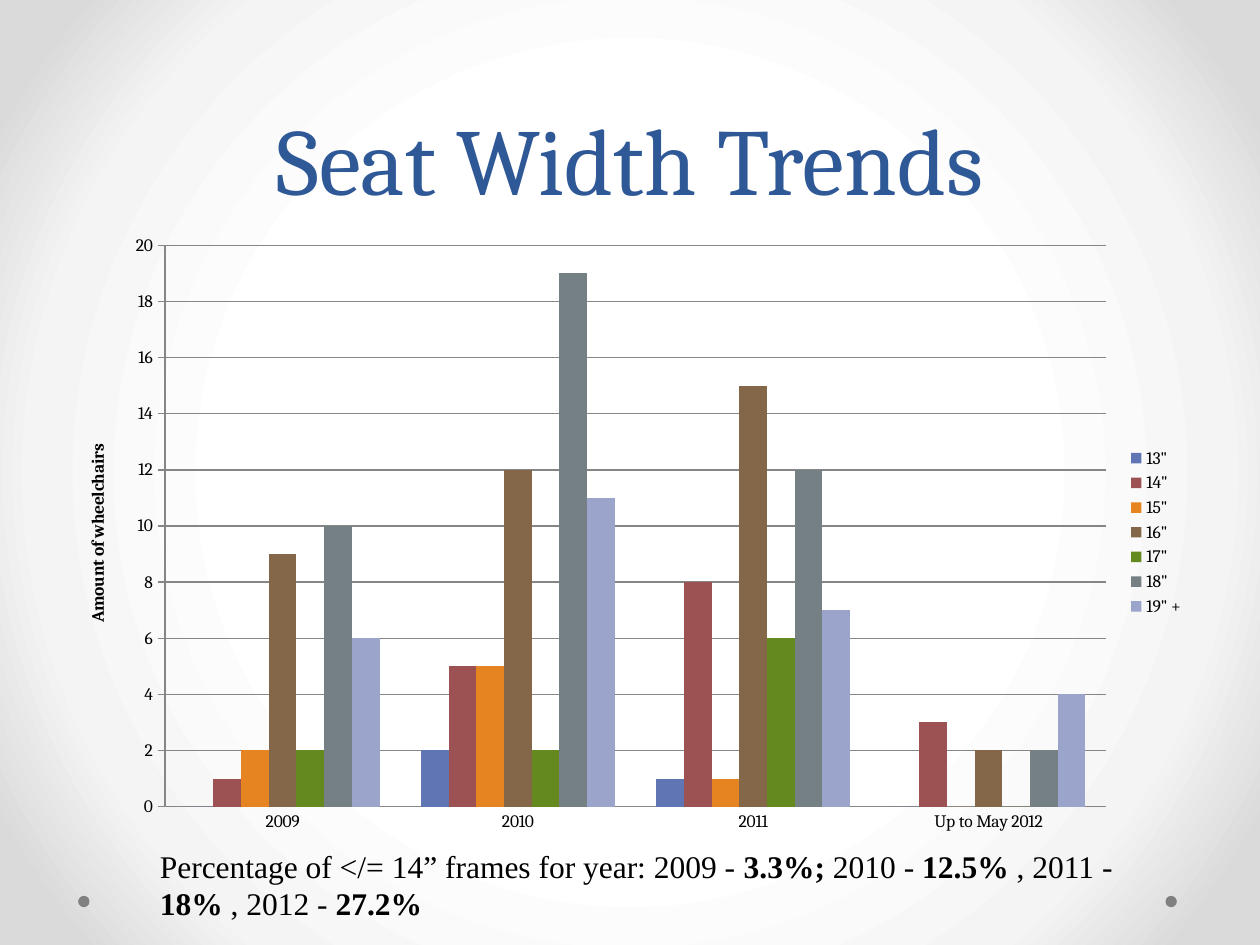
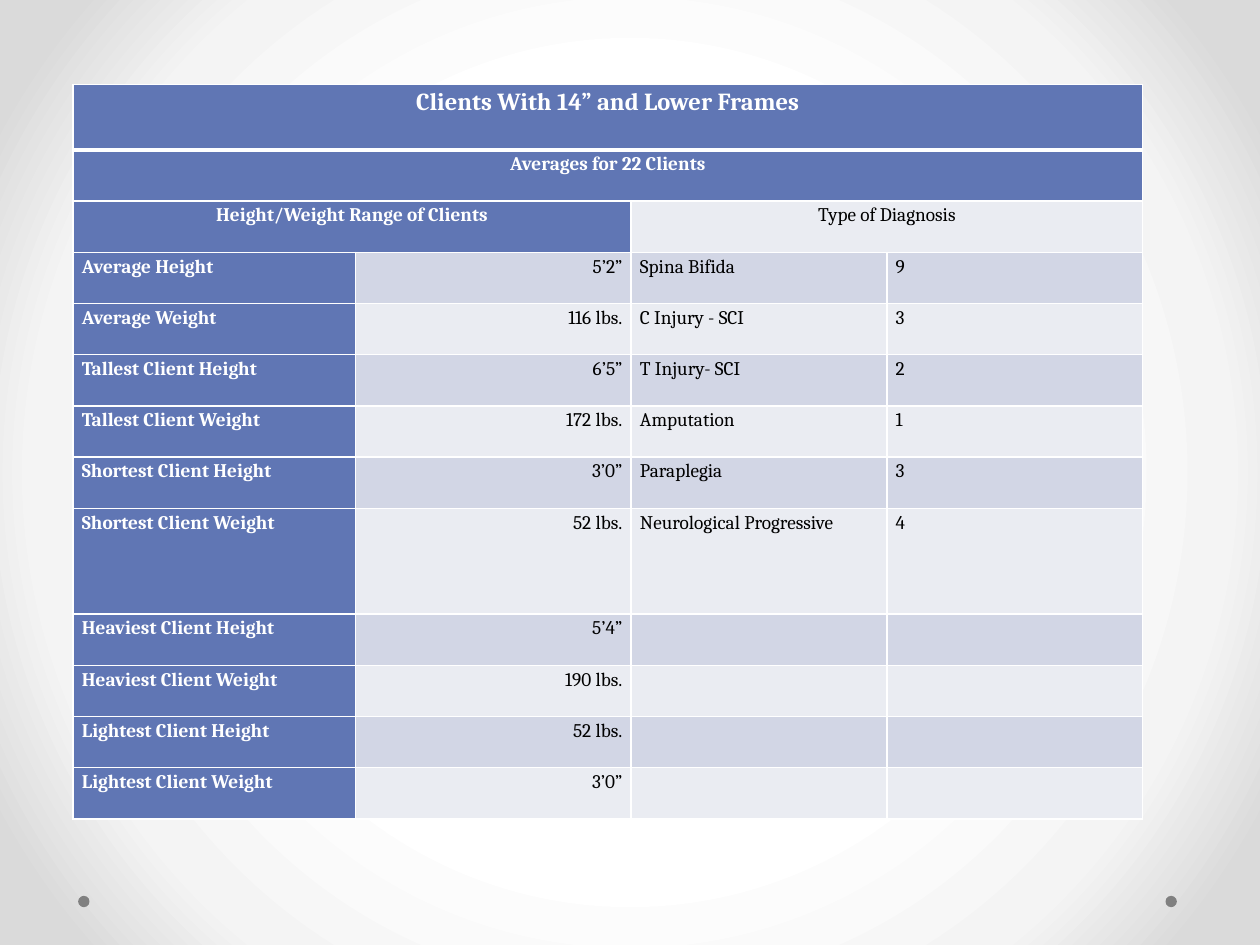
"""Build two slides on wheelchair seat widths and narrow-frame clients."""
from dataclasses import dataclass
from typing import NamedTuple

from pptx import Presentation
from pptx.chart.data import CategoryChartData
from pptx.dml.color import RGBColor
from pptx.enum.chart import XL_CHART_TYPE as CHART, XL_LEGEND_POSITION as LEGEND, XL_TICK_MARK as TICK
from pptx.enum.shapes import MSO_SHAPE as SHAPE
from pptx.enum.text import MSO_ANCHOR as ANCHOR, MSO_AUTO_SIZE as AUTO, PP_ALIGN as ALIGN
from pptx.oxml import parse_xml
from pptx.oxml.ns import nsdecls, qn
from pptx.util import Inches, Pt

COLORS = {
    "title": "2F5897", "text": "000000", "white": "FFFFFF", "dot": "808080",
    "grid": "868686", "head": "6076B4", "light": "EAECF2", "dark": "D2D6E5",
}
BACKDROP = {50: "FFFFFF", 76: "F4F4F4", 92: "DADADA"}
FONT = "Cambria"


@dataclass
class Dot:
    left: float
    top: float = 7.11
    size: float = 0.09


class Series(NamedTuple):
    name: str
    values: tuple
    color: str


class ClientRow(NamedTuple):
    label: str
    value: str
    diagnosis: str = ""
    count: str = ""


DOTS = [Dot(9.25), Dot(0.62)]
YEARS = ["2009", "2010", "2011", "Up to May 2012"]
WIDTHS = [
    Series('13"', (0, 2, 1, 0), "6076B4"),
    Series('14"', (1, 5, 8, 3), "9C5252"),
    Series('15"', (2, 5, 1, 0), "E68422"),
    Series('16"', (9, 12, 15, 2), "846648"),
    Series('17"', (2, 2, 6, 0), "63891F"),
    Series('18"', (10, 19, 12, 2), "758085"),
    Series('19" +', (6, 11, 7, 4), "9BA4CA"),
]
CLIENTS = [
    ClientRow("Average Height", "5’2”", "Spina Bifida", "9"),
    ClientRow("Average Weight", "116 lbs.", "C Injury - SCI", "3"),
    ClientRow("Tallest Client Height", "6’5”", "T Injury- SCI", "2"),
    ClientRow("Tallest Client Weight", "172 lbs.", "Amputation", "1"),
    ClientRow("Shortest Client Height", "3’0”", "Paraplegia", "3"),
    ClientRow("Shortest Client Weight", "52 lbs.", "Neurological Progressive", "4"),
    ClientRow("Heaviest Client Height", "5’4”"),
    ClientRow("Heaviest Client Weight", "190 lbs."),
    ClientRow("Lightest Client Height", "52 lbs."),
    ClientRow("Lightest Client Weight", "3’0”"),
]


def rgb(value: str) -> RGBColor:
    return RGBColor.from_string(COLORS.get(value, value))


def style(font, size: float, color: str = "text", bold: bool = False, name: str = FONT) -> None:
    font.size, font.bold, font.name = Pt(size), bold, name
    font.color.rgb = rgb(color)


def write(tf, text: str, *, size: float, color: str = "text", bold: bool = False,
          name: str = FONT, align=ALIGN.LEFT, spacing=None) -> None:
    p = tf.paragraphs[0]
    p.alignment, p.line_spacing = align, spacing
    for i, part in enumerate(text.split("|")):
        r = p.add_run()
        r.text = part
        style(r.font, size, color, bold or i % 2 == 1, name)


def set_backdrop(prs) -> None:
    prs.slide_master.background.fill.gradient()
    grad = prs.slide_master.element.find(".//" + qn("p:bgPr")).find(qn("a:gradFill"))
    stops = "".join(f'<a:gs pos="{pos * 1000}"><a:srgbClr val="{color}"/></a:gs>'
                    for pos, color in BACKDROP.items())
    new = parse_xml(f'<a:gradFill {nsdecls("a")} rotWithShape="1"><a:gsLst>{stops}</a:gsLst>'
                    '<a:path path="circle"><a:fillToRect l="50000" t="50000" r="50000" b="50000"/>'
                    '</a:path></a:gradFill>')
    grad.getparent().replace(grad, new)


def add_slide(prs, layout: int):
    s = prs.slides.add_slide(prs.slide_layouts[layout])
    for dot in DOTS:
        sp = s.shapes.add_shape(SHAPE.OVAL, Inches(dot.left), Inches(dot.top),
                                Inches(dot.size), Inches(dot.size))
        sp.shadow.inherit = False
        sp.fill.solid()
        sp.fill.fore_color.rgb = rgb("dot")
        sp.line.fill.background()
    return s


def add_title(s, text: str) -> None:
    sp = s.shapes.title
    sp.left, sp.top, sp.width, sp.height = Inches(0.5), Inches(0), Inches(9), Inches(1.75)
    tf = sp.text_frame
    tf.vertical_anchor, tf.auto_size = ANCHOR.BOTTOM, AUTO.NONE
    write(tf, text, size=54, color="title", align=ALIGN.CENTER, spacing=Pt(58))


def add_width_chart(s) -> None:
    data = CategoryChartData()
    data.categories = YEARS
    for series in WIDTHS:
        data.add_series(series.name, series.values)
    chart = s.shapes.add_chart(CHART.COLUMN_CLUSTERED, Inches(0.5), Inches(1.75),
                               Inches(9), Inches(4.95), data).chart
    style(chart.font, 10)
    chart.has_title = False
    chart.has_legend = True
    chart.legend.position = LEGEND.RIGHT
    chart.legend.include_in_layout = False

    plot = chart.plots[0]
    plot.gap_width, plot.overlap, plot.vary_by_categories = 150, 0, False
    for drawn, series in zip(plot.series, WIDTHS):
        drawn.format.fill.solid()
        drawn.format.fill.fore_color.rgb = rgb(series.color)

    years, amounts = chart.category_axis, chart.value_axis
    years.major_tick_mark = TICK.NONE
    amounts.major_tick_mark = TICK.CROSS
    amounts.minimum_scale, amounts.maximum_scale, amounts.major_unit = 0, 20, 2
    amounts.has_major_gridlines = True
    for line in (years.format.line, amounts.format.line, amounts.major_gridlines.format.line):
        line.color.rgb = rgb("grid")
        line.width = Pt(0.75)
    write(amounts.axis_title.text_frame, "Amount of wheelchairs", size=10, bold=True,
          align=ALIGN.CENTER)
    place_plot(chart, x=0.09, y=0.04, w=0.83, h=0.9)


def place_plot(chart, **box: float) -> None:
    area = chart.element.find(".//" + qn("c:plotArea"))
    for old in area.findall(qn("c:layout")):
        area.remove(old)
    modes = '<c:layoutTarget val="inner"/><c:xMode val="edge"/><c:yMode val="edge"/>'
    sizes = "".join(f'<c:{key} val="{val}"/>' for key, val in box.items())
    area.insert(0, parse_xml(f'<c:layout {nsdecls("c")}><c:manualLayout>{modes}{sizes}'
                             '</c:manualLayout></c:layout>'))


def add_caption(s, text: str) -> None:
    tf = s.shapes.add_textbox(Inches(1.17), Inches(6.67), Inches(7.92), Inches(0.71)).text_frame
    tf.word_wrap, tf.auto_size = True, AUTO.SHAPE_TO_FIT_TEXT
    write(tf, text, size=18, name="Times New Roman")


def format_cell(cell, fill: str, top: int = 1, bottom: int = 1) -> None:
    cell.margin_left = cell.margin_right = Inches(0.07)
    cell.margin_top = cell.margin_bottom = 0
    cell.fill.solid()
    cell.fill.fore_color.rgb = rgb(fill)
    tc_pr = cell._tc.get_or_add_tcPr()
    for i, (side, width) in enumerate(zip("LRTB", (1, 1, top, bottom))):
        tc_pr.insert(i, parse_xml(
            f'<a:ln{side} {nsdecls("a")} w="{Pt(width)}"><a:solidFill>'
            f'<a:srgbClr val="{COLORS["white"]}"/></a:solidFill></a:ln{side}>'))


def fill_cell(cell, text: str, *, head: bool = False, size: float = 11, align=ALIGN.LEFT) -> None:
    if text:
        write(cell.text_frame, text, size=size, color="white" if head else "text",
              bold=head, align=align, spacing=1.15)


def add_client_table(s) -> None:
    n_rows, height, first, tall, tall_row = len(CLIENTS) + 3, 5.83, 0.52, 0.84, 8
    table = s.shapes.add_table(n_rows, 4, Inches(0.58), Inches(0.67),
                               Inches(8.49), Inches(height)).table
    for col, width in zip(table.columns, (2.24, 2.19, 2.03, 2.03)):
        col.width = Inches(width)
    special = {0: first, tall_row: tall}
    usual = (height - first - tall) / (n_rows - 2)
    for i, row in enumerate(table.rows):
        row.height = Inches(special.get(i, usual))
        for j, cell in enumerate(row.cells):
            head = i < 2 or j == 0 or (i == 2 and j == 1)
            fill = "head" if head else "dark" if i % 2 else "light"
            format_cell(cell, fill, top=3 if i == 1 else 1, bottom=3 if i == 0 else 1)

    for i, j, last, text, size in (
            (0, 0, 3, "Clients With 14” and Lower Frames", 14),
            (1, 0, 3, "Averages for 22 Clients", 11),
            (2, 0, 1, "Height/Weight Range of Clients", 11),
            (2, 2, 3, "Type of Diagnosis", 11)):
        table.cell(i, j).merge(table.cell(i, last))
        fill_cell(table.cell(i, j), text, head=j == 0, size=size, align=ALIGN.CENTER)
    for i, client in enumerate(CLIENTS, start=3):
        for j, text in enumerate(client):
            fill_cell(table.cell(i, j), text, head=j == 0,
                      align=ALIGN.RIGHT if j == 1 else ALIGN.LEFT)


def main() -> None:
    prs = Presentation()
    prs.slide_width, prs.slide_height = Inches(10), Inches(7.5)
    set_backdrop(prs)

    s = add_slide(prs, 5)
    add_title(s, "Seat Width Trends")
    add_width_chart(s)
    add_caption(s, "Percentage of </= 14” frames for year: 2009 - |3.3%;| 2010 - |12.5%"
                   "| , 2011 - |18%| , 2012 - |27.2%")

    add_client_table(add_slide(prs, 6))
    prs.save("out.pptx")


if __name__ == "__main__":
    main()
